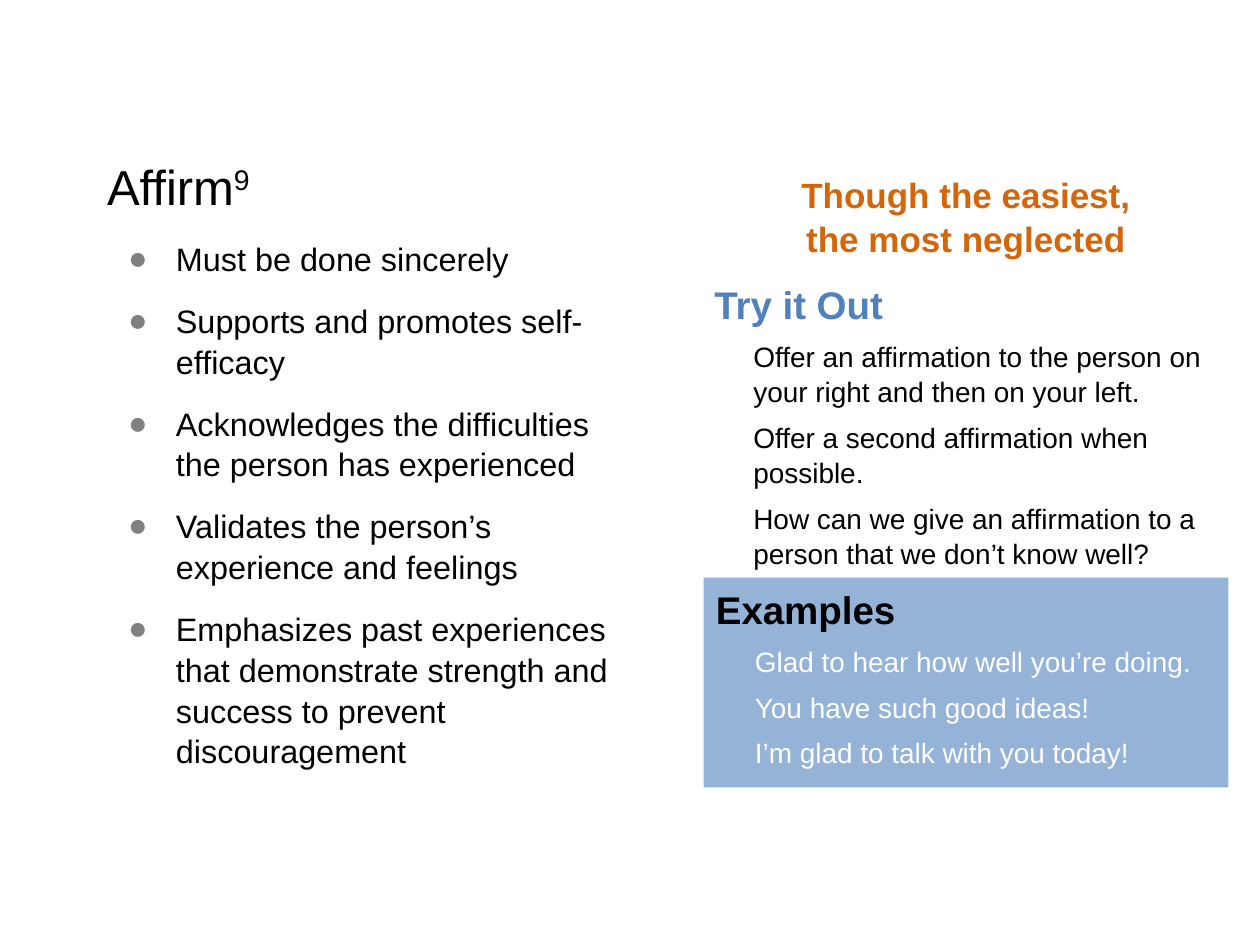
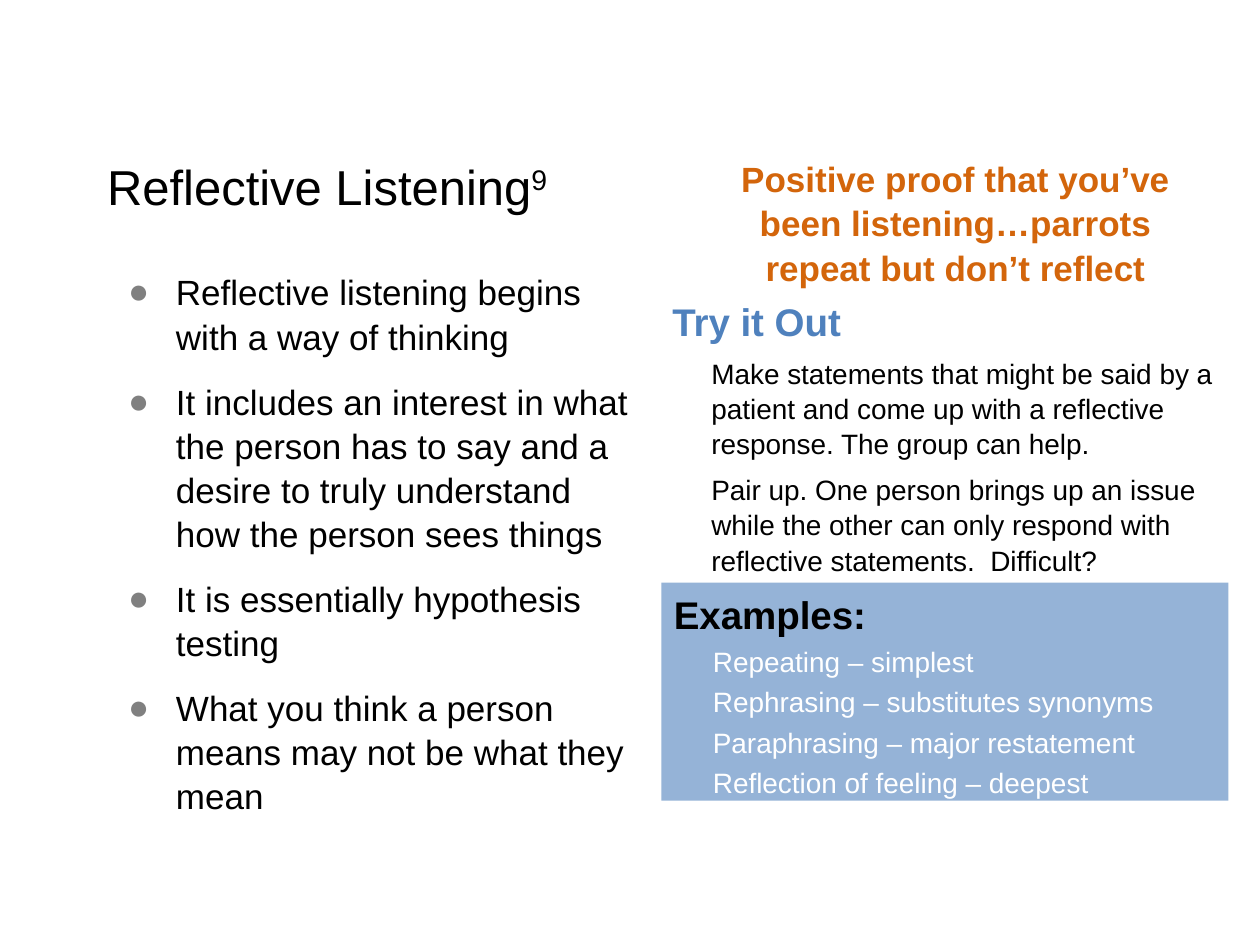
from dataclasses import dataclass

from lxml import etree
from pptx import Presentation
from pptx.dml.color import RGBColor
from pptx.enum.shapes import MSO_SHAPE
from pptx.enum.text import MSO_ANCHOR, MSO_AUTO_SIZE, PP_ALIGN
from pptx.oxml.ns import qn
from pptx.util import Inches, Pt

RECTANGLE = MSO_SHAPE.RECTANGLE
TOP = MSO_ANCHOR.TOP
NO_FIT = MSO_AUTO_SIZE.NONE
LEFT, CENTER = PP_ALIGN.LEFT, PP_ALIGN.CENTER


@dataclass(frozen=True)
class Theme:
    font: str = "Arial"
    black: str = "000000"
    white: str = "FFFFFF"
    orange: str = "D3650B"
    blue: str = "4F81BD"
    pale_blue: str = "95B3D7"
    bullet_gray: str = "808080"
    title_size: float = 28
    heading_size: float = 22
    motto_size: float = 20
    item_size: float = 16
    line_spacing: float = 1.05
    bullet_indent: float = 0.38
    item_indent: float = 0.31


theme = Theme()

# Slide content; boxes are (column, row, columns, rows) on a 120 by 90 grid
slides = [
    {
        "title": "Affirm",
        "body_box": (11, 22, 50, 50),
        "body_size": 18.5,
        "body": [
            "Must be done sincerely",
            "Supports and promotes self-efficacy",
            "Acknowledges the difficulties the person has experienced",
            "Validates the person’s experience and feelings",
            "Emphasizes past experiences that demonstrate strength and success "
            "to prevent discouragement",
        ],
        "motto_box": (74, 15.75, 36, 9.25),
        "motto": "Though the easiest, the most neglected",
        "practice_box": (66.85, 26, 50.15, 29),
        "practice": [
            "Try it Out",
            "Offer an affirmation to the person on your right and then on your left.",
            "Offer a second affirmation when possible.",
            "How can we give an affirmation to a person that we don’t know well?",
        ],
        "examples_box": (67, 55, 50, 20),
        "examples_gap": 6,
        "examples": [
            "Examples",
            "Glad to hear how well you’re doing.",
            "You have such good ideas!",
            "I’m glad to talk with you today!",
        ],
    },
    {
        "title": "Reflective Listening",
        "body_box": (11, 25, 51, 49),
        "body_size": 20,
        "body": [
            "Reflective listening begins with a way of thinking",
            "It includes an interest in what the person has to say and a desire "
            "to truly understand how the person sees things",
            "It is essentially hypothesis testing",
            "What you think a person means may not be what they mean",
        ],
        "motto_box": (66, 14.25, 50, 13.35),
        "motto": "Positive proof that you’ve been listening…parrots repeat but don’t reflect",
        "practice_box": (62.85, 27.6, 54.15, 27.75),
        "practice": [
            "Try it Out",
            "Make statements that might be said by a patient and come up with a "
            "reflective response. The group can help.",
            "Pair up. One person brings up an issue while the other can only "
            "respond with reflective statements.  Difficult?",
        ],
        "examples_box": (63, 55.5, 54, 20.75),
        "examples_gap": 3,
        "examples": [
            "Examples:",
            "Repeating – simplest",
            "Rephrasing – substitutes synonyms",
            "Paraphrasing – major restatement",
            "Reflection of feeling – deepest",
        ],
    },
]

presentation = Presentation()
presentation.slide_width = Inches(10)
presentation.slide_height = Inches(7.5)
column_width = presentation.slide_width / 120
row_height = presentation.slide_height / 90


def place(box):
    column, row, columns, rows = box
    return (round(column * column_width), round(row * row_height),
            round(columns * column_width), round(rows * row_height))


def write(shape, texts, size, color, bold=False, gap=0, align=LEFT):
    """Fill the shape with one paragraph per text and return the paragraphs."""
    frame = shape.text_frame
    frame.word_wrap = True
    frame.auto_size = NO_FIT
    frame.vertical_anchor = TOP
    frame.text = "\n".join(texts)
    for index, paragraph in enumerate(frame.paragraphs):
        paragraph.alignment = align
        paragraph.line_spacing = theme.line_spacing
        paragraph.space_before = Pt(gap if index else 0)
        paragraph.font.name = theme.font
        paragraph.font.size = Pt(size)
        paragraph.font.bold = bold
        paragraph.font.color.rgb = RGBColor.from_string(color)
    return frame.paragraphs


for content in slides:
    slide = presentation.slides.add_slide(presentation.slide_layouts[1])

    # Title with its raised reference number
    title = slide.shapes.title
    title.left, title.top, title.width, title.height = place((9, 14, 105, 11))
    paragraph = write(title, [content["title"]], theme.title_size, theme.black)[0]
    reference = paragraph.add_run()
    reference.text = "9"
    reference._r.get_or_add_rPr().set("baseline", "30000")

    # Bulleted list
    body = slide.placeholders[1]
    body.left, body.top, body.width, body.height = place(content["body_box"])
    for paragraph in write(body, content["body"], content["body_size"], theme.black, gap=12):
        properties = paragraph._p.get_or_add_pPr()
        properties.set("marL", str(Inches(theme.bullet_indent)))
        properties.set("indent", str(-Inches(theme.bullet_indent)))
        bullet_color = etree.Element(qn("a:buClr"))
        etree.SubElement(bullet_color, qn("a:srgbClr"), val=theme.bullet_gray)
        bullet_font = etree.Element(qn("a:buFont"), typeface=theme.font)
        bullet = etree.Element(qn("a:buChar"), char="●")
        defaults = properties.find(qn("a:defRPr"))
        for element in (bullet_color, bullet_font, bullet):
            defaults.addprevious(element)

    # Motto
    motto = slide.shapes.add_textbox(*place(content["motto_box"]))
    write(motto, [content["motto"]], theme.motto_size, theme.orange, bold=True, align=CENTER)

    # Practice and examples panels: a bold heading over indented items
    panels = [
        ("practice", theme.white, theme.blue, theme.black, 6),
        ("examples", theme.pale_blue, theme.black, theme.white, content["examples_gap"]),
    ]
    for name, fill, heading_color, item_color, gap in panels:
        panel = slide.shapes.add_shape(RECTANGLE, *place(content[name + "_box"]))
        panel.shadow.inherit = False
        panel.fill.solid()
        panel.fill.fore_color.rgb = RGBColor.from_string(fill)
        panel.line.fill.background()
        heading, *items = write(panel, content[name], theme.item_size, item_color, gap=gap)
        heading.font.size = Pt(theme.heading_size)
        heading.font.bold = True
        heading.font.color.rgb = RGBColor.from_string(heading_color)
        for item in items:
            item._p.get_or_add_pPr().set("marL", str(Inches(theme.item_indent)))

presentation.save("out.pptx")
